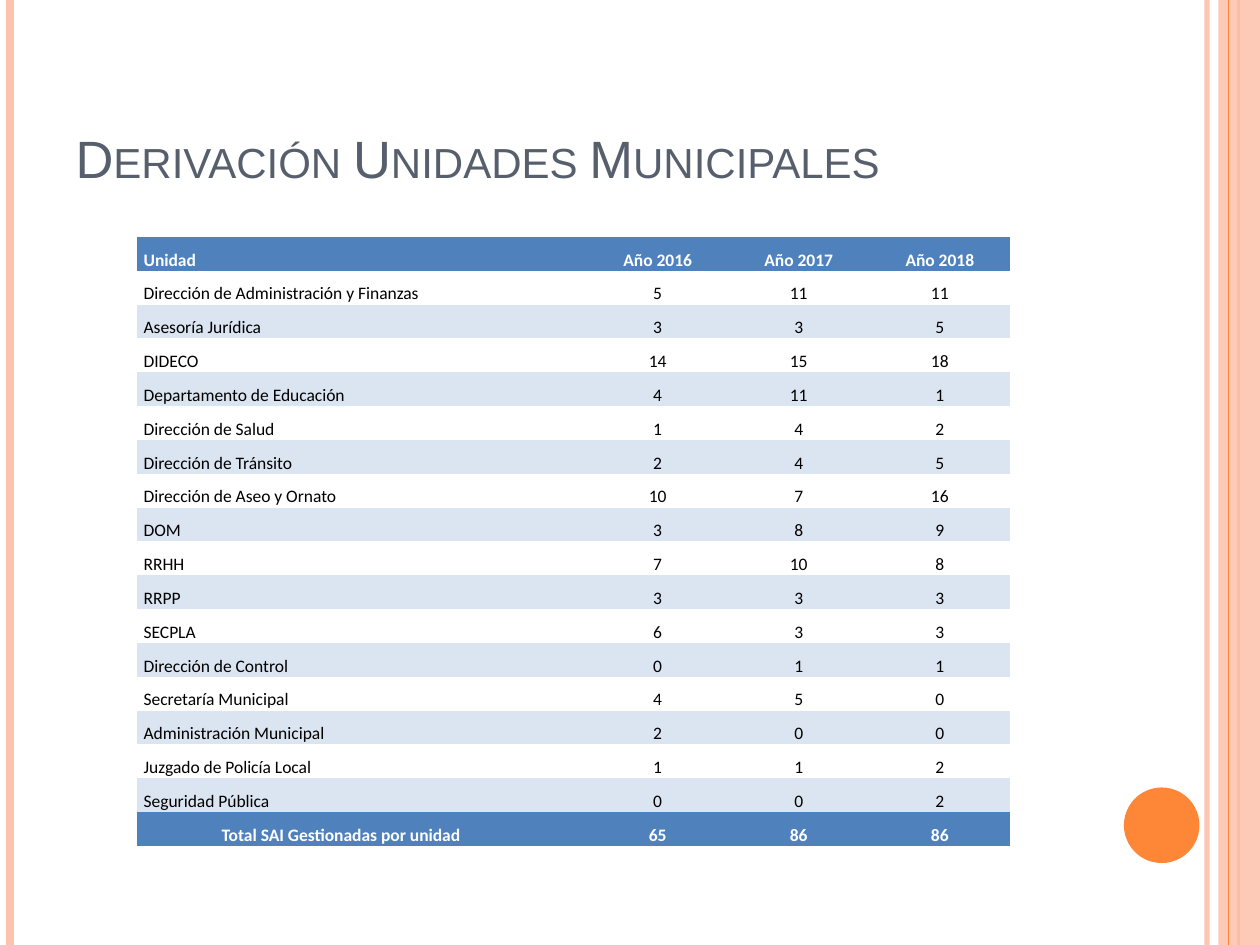
import dataclasses

import lxml.etree
import pptx
import pptx.dml.color
import pptx.enum.shapes
import pptx.enum.text
import pptx.oxml.ns
import pptx.util

Inches = pptx.util.Inches
Pt = pptx.util.Pt
Align = pptx.enum.text.PP_ALIGN
Anchor = pptx.enum.text.MSO_ANCHOR
Shapes = pptx.enum.shapes.MSO_SHAPE


@dataclasses.dataclass(frozen=True)
class Theme:
    title_font: str = "Arial"
    table_font: str = "Calibri"
    title_size: int = 30
    table_size: int = 10
    title_color: str = "575F6D"
    peach: str = "FEC3AE"
    orange: str = "FE8637"
    header: str = "4F81BD"
    band: str = "DBE5F1"
    white: str = "FFFFFF"
    black: str = "000000"


THEME = Theme()
SLIDE_WIDTH, SLIDE_HEIGHT = 10, 7.5
TABLE_HEIGHT = 4.84
NO_TABLE_STYLE = "{2D5ABB26-0587-4C30-8999-92F81FD0307C}"
COLUMN_WIDTHS = [3.23, 0.17, 0.17, 1.12, 1.12, 1.12]
FIRST_YEAR_COLUMN = 3

HEADER = ("Unidad", "Año 2016", "Año 2017", "Año 2018")
UNITS = [
    ("Dirección de Administración y Finanzas", 5, 11, 11),
    ("Asesoría Jurídica", 3, 3, 5),
    ("DIDECO", 14, 15, 18),
    ("Departamento de Educación", 4, 11, 1),
    ("Dirección de Salud", 1, 4, 2),
    ("Dirección de Tránsito", 2, 4, 5),
    ("Dirección de Aseo y Ornato", 10, 7, 16),
    ("DOM", 3, 8, 9),
    ("RRHH", 7, 10, 8),
    ("RRPP", 3, 3, 3),
    ("SECPLA", 6, 3, 3),
    ("Dirección de Control", 0, 1, 1),
    ("Secretaría Municipal", 4, 5, 0),
    ("Administración Municipal", 2, 0, 0),
    ("Juzgado de Policía Local", 1, 1, 2),
    ("Seguridad Pública", 0, 0, 2),
]
TOTAL = ("Total SAI Gestionadas por unidad", 65, 86, 86)


def rgb(color):
    return pptx.dml.color.RGBColor.from_string(color)


def set_opacity(shape, percent):
    qn = pptx.oxml.ns.qn
    color = next(shape._element.spPr.iter(qn("a:srgbClr")))
    lxml.etree.SubElement(color, qn("a:alpha")).set("val", str(percent * 1000))


def add_vertical_line(slide, x, color, width):
    line = slide.shapes.add_connector(
        pptx.enum.shapes.MSO_CONNECTOR.STRAIGHT,
        Inches(x), 0, Inches(x), Inches(SLIDE_HEIGHT),
    )
    line.line.color.rgb = rgb(color)
    line.line.width = Pt(width)
    lxml.etree.SubElement(line._element.spPr, pptx.oxml.ns.qn("a:effectLst"))
    return line


def add_plain_shape(slide, kind, left, top, width, height, color):
    shape = slide.shapes.add_shape(
        kind, Inches(left), Inches(top), Inches(width), Inches(height)
    )
    shape.shadow.inherit = False
    shape.fill.solid()
    shape.fill.fore_color.rgb = rgb(color)
    shape.line.fill.background()
    return shape


def add_decoration(slide):
    set_opacity(add_vertical_line(slide, 9.58, THEME.peach, 3), 93)
    add_vertical_line(slide, 0.08, THEME.peach, 4.5)
    add_vertical_line(slide, 9.83, THEME.orange, 1.5)
    side_band = add_plain_shape(
        slide, Shapes.RECTANGLE, 9.67, 0, 0.33, SLIDE_HEIGHT, THEME.peach
    )
    set_opacity(side_band, 87)
    add_vertical_line(slide, 9.75, THEME.orange, 0.75)
    add_plain_shape(slide, Shapes.OVAL, 8.92, 6.25, 0.6, 0.6, THEME.orange)


def format_title(title, text):
    title.left, title.top = Inches(0.5), Inches(0.3)
    title.width, title.height = Inches(8.17), Inches(1.25)
    title.text_frame.text = text
    title.text_frame.vertical_anchor = Anchor.BOTTOM
    paragraph = title.text_frame.paragraphs[0]
    paragraph.alignment = Align.LEFT
    run = paragraph.runs[0]
    run.font.name = THEME.title_font
    run.font.size = Pt(THEME.title_size)
    run.font.color.rgb = rgb(THEME.title_color)
    run._r.get_or_add_rPr().set("cap", "small")


def format_cell(cell, text, fill, color, bold, alignment):
    cell.margin_left = cell.margin_right = Inches(0.05)
    cell.margin_top = cell.margin_bottom = 0
    cell.vertical_anchor = Anchor.BOTTOM
    if fill:
        cell.fill.solid()
        cell.fill.fore_color.rgb = rgb(fill)
    else:
        cell.fill.background()
    cell.text_frame.text = text
    paragraph = cell.text_frame.paragraphs[0]
    paragraph.alignment = alignment
    paragraph.line_spacing = 1.15
    for run in paragraph.runs:
        run.font.name = THEME.table_font
        run.font.size = Pt(THEME.table_size)
        run.font.bold = bold
        run.font.color.rgb = rgb(color)
    if not text:
        end = paragraph._p.get_or_add_endParaRPr()
        end.set("sz", str(THEME.table_size * 100))


def add_units_table(slide):
    rows = [HEADER, *UNITS, TOTAL]
    last = len(rows) - 1
    table = slide.shapes.add_table(
        len(rows), len(COLUMN_WIDTHS), Inches(1.09), Inches(1.88),
        Inches(sum(COLUMN_WIDTHS)), Inches(TABLE_HEIGHT),
    ).table
    table.first_row = table.horz_banding = False
    table._tbl.tblPr.find(pptx.oxml.ns.qn("a:tableStyleId")).text = NO_TABLE_STYLE
    for column, width in zip(table.columns, COLUMN_WIDTHS):
        column.width = Inches(width)
    for index, (name, *values) in enumerate(rows):
        table.rows[index].height = Inches(TABLE_HEIGHT / len(rows))
        strong = index in (0, last)
        band = None if index % 2 else THEME.band
        fill = THEME.header if strong else band
        color = THEME.white if strong else THEME.black
        for column, value in enumerate([name, "", "", *values]):
            centered = column >= FIRST_YEAR_COLUMN or index == last
            alignment = Align.CENTER if centered else Align.LEFT
            format_cell(
                table.cell(index, column), str(value), fill, color, strong, alignment
            )
        if index != last:
            table.cell(index, 0).merge(table.cell(index, FIRST_YEAR_COLUMN - 1))


def main():
    presentation = pptx.Presentation()
    presentation.slide_width = Inches(SLIDE_WIDTH)
    presentation.slide_height = Inches(SLIDE_HEIGHT)
    slide = presentation.slides.add_slide(presentation.slide_layouts[5])
    add_decoration(slide)
    format_title(slide.shapes.title, "Derivación Unidades Municipales")
    add_units_table(slide)
    presentation.save("out.pptx")


if __name__ == "__main__":
    main()
